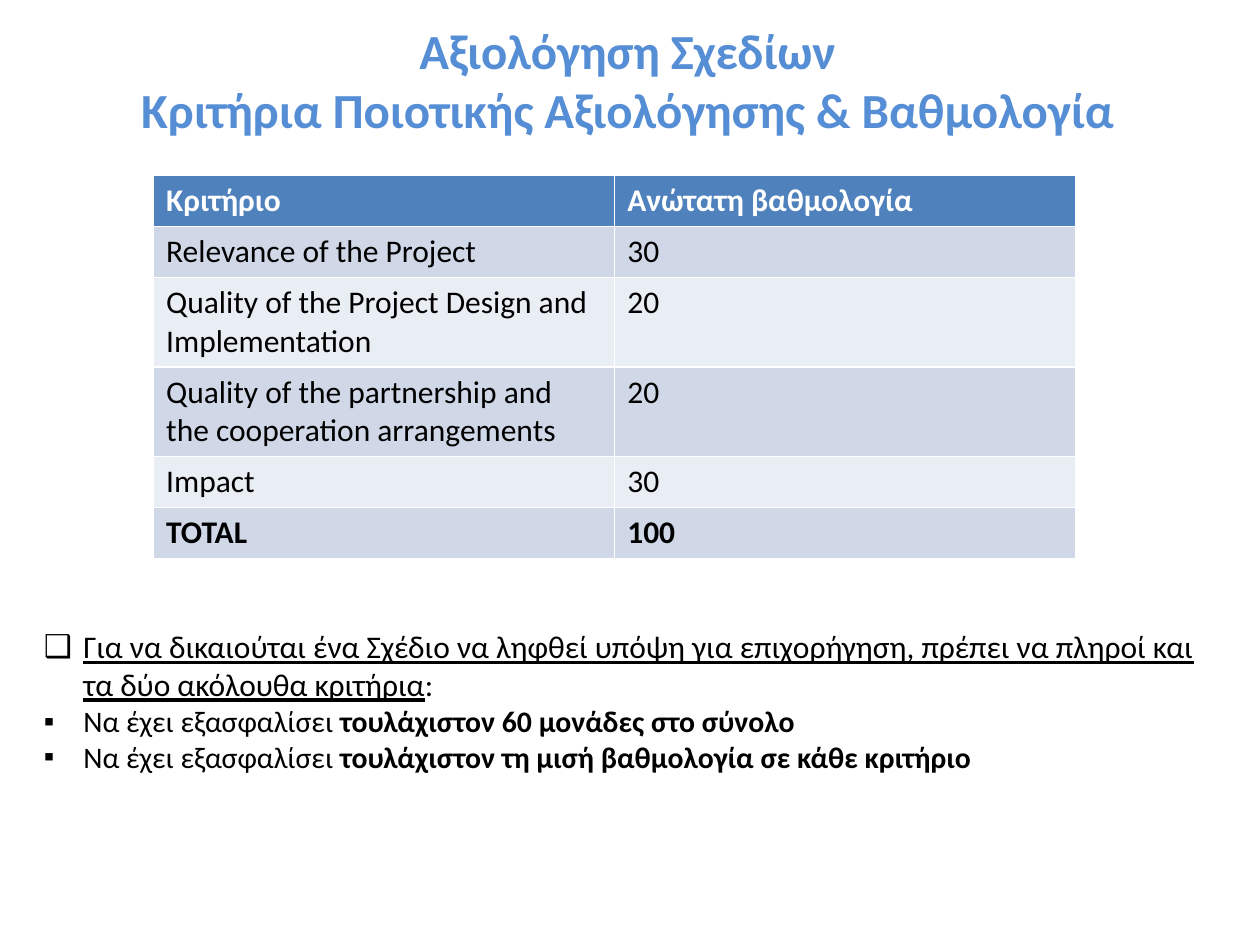
from lxml import etree
from pptx import Presentation
from pptx.dml.color import RGBColor
from pptx.enum import text
from pptx.oxml import ns
from pptx.util import Pt

TITLE = ["Αξιολόγηση Σχεδίων", "Κριτήρια Ποιοτικής Αξιολόγησης & Βαθμολογία"]
CRITERIA = [
    ("Κριτήριο", "Ανώτατη βαθμολογία"),
    ("Relevance of the Project", "30"),
    ("Quality of the Project Design and Implementation", "20"),
    ("Quality of the partnership and the cooperation arrangements", "20"),
    ("Impact", "30"),
    ("TOTAL", "100"),
]
# Bullet, then runs of text with their format
REQUIREMENTS = [
    ("❑", [("Για να δικαιούται ένα Σχέδιο να ληφθεί υπόψη για επιχορήγηση, "
            "πρέπει να πληροί και τα δύο ακόλουθα κριτήρια",
            {"size": Pt(18), "underline": True}),
           (":", {"size": Pt(18)})]),
    ("▪", [("Να έχει εξασφαλίσει ", {"size": Pt(17)}),
           ("τουλάχιστον 60 μονάδες στο σύνολο", {"size": Pt(17), "bold": True})]),
    ("▪", [("Να έχει εξασφαλίσει ", {"size": Pt(17)}),
           ("τουλάχιστον τη μισή βαθμολογία σε κάθε κριτήριο",
            {"size": Pt(17), "bold": True})]),
]

TITLE_BOX = (41, 7.2, 635, 76.3)
TABLE_BOX = (87.8, 100.1, 527, 216)
REQUIREMENTS_BOX = (18, 355, 680.4, 92)
SINGLE_ROW, DOUBLE_ROW = 28.4, 48.2
LONG_LABEL = 30
INDENT = 22.5
HEADER_FILL, BANDS = "4F81BD", ("D0D8E8", "E9EDF4")


def points(box):
    return [Pt(value) for value in box]


def add_run(paragraph, content, color, **formats):
    run = paragraph.add_run()
    run.text = content
    run.font.name = "Calibri"
    run.font.color.rgb = RGBColor.from_string(color)
    for name, value in formats.items():
        setattr(run.font, name, value)


def add_bullet(paragraph, character):
    """Give the paragraph a hanging bullet."""
    properties = paragraph._p.get_or_add_pPr()
    properties.set("marL", str(Pt(INDENT)))
    properties.set("indent", str(-Pt(INDENT)))
    etree.SubElement(properties, ns.qn("a:buFont"), typeface="Arial")
    etree.SubElement(properties, ns.qn("a:buChar"), char=character)


def paragraphs(frame, count):
    return [frame.paragraphs[0]] + [frame.add_paragraph() for _ in range(count - 1)]


def add_title(slide):
    title = slide.shapes.title
    title.left, title.top, title.width, title.height = points(TITLE_BOX)
    frame = title.text_frame
    frame.auto_size = text.MSO_AUTO_SIZE.NONE
    frame.vertical_anchor = text.MSO_ANCHOR.MIDDLE
    for paragraph, line in zip(paragraphs(frame, len(TITLE)), TITLE):
        paragraph.alignment = text.PP_ALIGN.CENTER
        add_run(paragraph, line, "558ED5", size=Pt(28), bold=True)


def add_criteria(slide):
    table = slide.shapes.add_table(len(CRITERIA), 2, *points(TABLE_BOX)).table
    last = len(CRITERIA) - 1
    for index, values in enumerate(CRITERIA):
        header = index == 0
        is_long = len(values[0]) > LONG_LABEL
        table.rows[index].height = Pt(DOUBLE_ROW if is_long else SINGLE_ROW)
        for cell, value in zip(table.rows[index].cells, values):
            cell.fill.solid()
            fill = HEADER_FILL if header else BANDS[(index - 1) % 2]
            cell.fill.fore_color.rgb = RGBColor.from_string(fill)
            add_run(cell.text_frame.paragraphs[0], value,
                    "FFFFFF" if header else "000000",
                    size=Pt(18), bold=index in (0, last))


def add_requirements(slide):
    frame = slide.shapes.add_textbox(*points(REQUIREMENTS_BOX)).text_frame
    frame.word_wrap = True
    frame.auto_size = text.MSO_AUTO_SIZE.SHAPE_TO_FIT_TEXT
    rows = paragraphs(frame, len(REQUIREMENTS))
    for paragraph, (bullet, runs) in zip(rows, REQUIREMENTS):
        add_bullet(paragraph, bullet)
        for content, formats in runs:
            add_run(paragraph, content, "000000", **formats)


def main():
    presentation = Presentation()
    presentation.slide_width, presentation.slide_height = Pt(720), Pt(540)
    slide = presentation.slides.add_slide(presentation.slide_layouts[5])
    add_title(slide)
    add_criteria(slide)
    add_requirements(slide)
    presentation.save("out.pptx")


if __name__ == "__main__":
    main()
